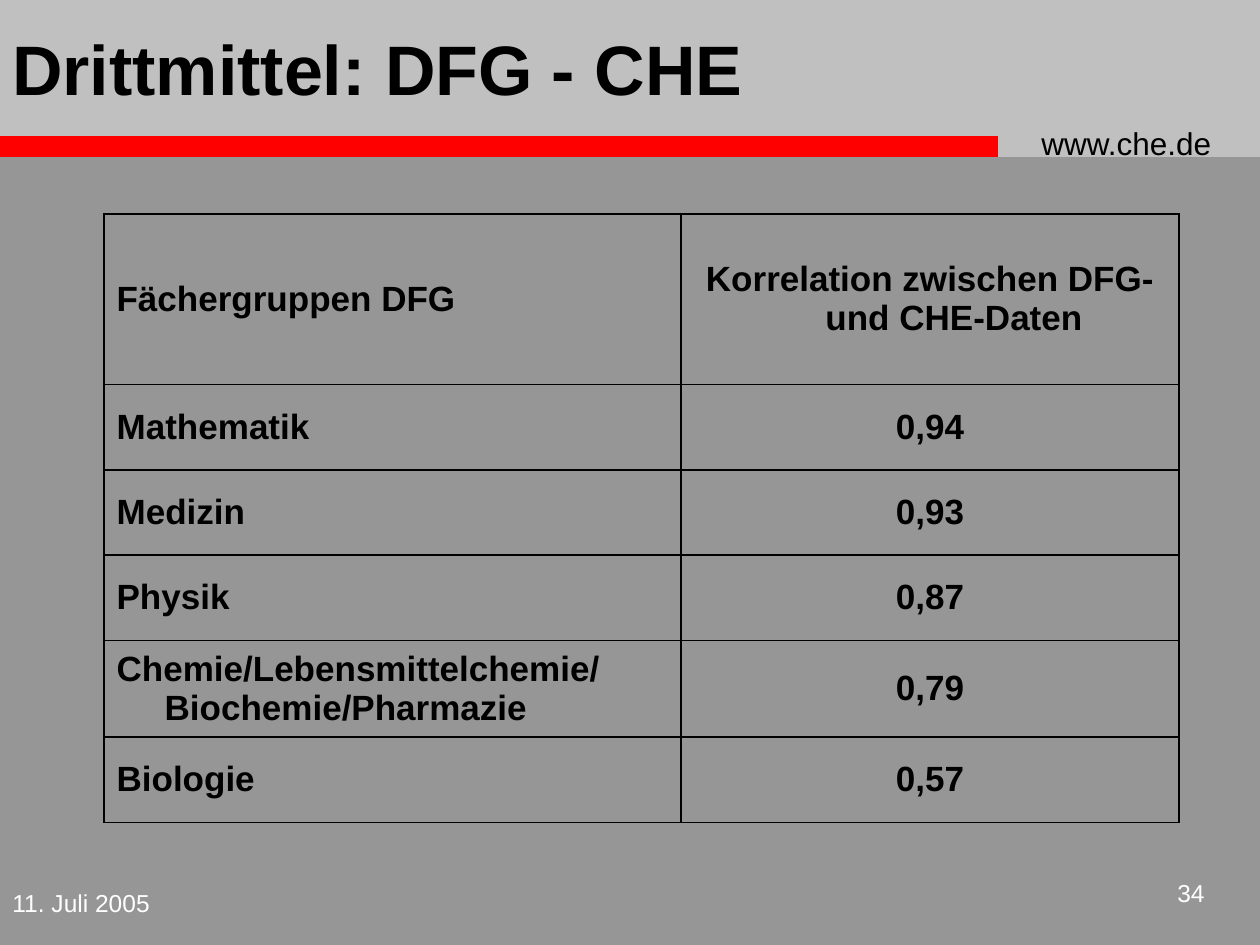
from lxml import etree
from pptx import Presentation
from pptx.dml.color import RGBColor
from pptx.enum.shapes import MSO_SHAPE
from pptx.enum.text import MSO_ANCHOR, PP_ALIGN
from pptx.oxml.ns import qn
from pptx.util import Emu, Pt

RECT = MSO_SHAPE.RECTANGLE
TOP, MIDDLE = MSO_ANCHOR.TOP, MSO_ANCHOR.MIDDLE
LEFT, CENTER, RIGHT = PP_ALIGN.LEFT, PP_ALIGN.CENTER, PP_ALIGN.RIGHT
COLORS = {
    "background": "969696",
    "header": "C0C0C0",
    "bar": "FF0000",
    "text": "000000",
    "footer": "FFFFFF",
}
FORMATS = {
    "title": {"size": Pt(40), "bold": True},
    "address": {"size": Pt(18), "bold": False},
    "footer": {"size": Pt(14), "bold": False},
    "cell": {"size": Pt(20), "bold": True},
}
ROWS = [
    ("Fächergruppen DFG", "Korrelation zwischen DFG- und CHE-Daten"),
    ("Mathematik", "0,94"),
    ("Medizin", "0,93"),
    ("Physik", "0,87"),
    ("Chemie/Lebensmittelchemie/Biochemie/Pharmazie", "0,79"),
    ("Biologie", "0,57"),
]


def px(value):
    return Emu(round(value * 914400 / 126))


def rgb(name):
    return RGBColor.from_string(COLORS[name])


def write(p, text, style, color="text", align=LEFT):
    p.alignment = align
    r = p.add_run()
    r.text = text
    r.font.name = "Arial"
    r.font.color.rgb = rgb(color)
    for name, value in FORMATS[style].items():
        setattr(r.font, name, value)


def add_text(s, box, text, style, color="text", align=LEFT, anchor=TOP):
    tf = s.shapes.add_textbox(*map(px, box)).text_frame
    tf.word_wrap = True
    tf.vertical_anchor = anchor
    write(tf.paragraphs[0], text, style, color, align)


def add_rect(s, box, color):
    sp = s.shapes.add_shape(RECT, *map(px, box))
    sp.shadow.inherit = False
    sp.fill.solid()
    sp.fill.fore_color.rgb = rgb(color)
    sp.line.fill.background()


def add_header(s, x, y, w, h):
    bar_h = 21
    bar_y = y + h - bar_h
    add_rect(s, (x, y, w, h), "header")
    add_rect(s, (x, bar_y, 998, bar_h), "bar")
    add_text(s, (x + 1029, bar_y - 18, 221, 50), "www.che.de", "address")
    add_text(s, (x, y, 1018, h - bar_h), "Drittmittel: DFG - CHE", "title", anchor=MIDDLE)


def add_footer(s, x, y, w, h):
    add_text(s, (x, y + 10, 323, h - 10), "11. Juli 2005", "footer", "footer")
    add_text(s, (x + w - 116, y, 73, 53), "34", "footer", "footer", RIGHT)


def add_borders(cell):
    tc_pr = cell._tc.get_or_add_tcPr()
    for i, side in enumerate(("lnL", "lnR", "lnT", "lnB")):
        ln = etree.Element(qn(f"a:{side}"), w=str(Pt(1)))
        fill = etree.SubElement(ln, qn("a:solidFill"))
        etree.SubElement(fill, qn("a:srgbClr"), val=COLORS["text"])
        tc_pr.insert(i, ln)


def add_correlations(s, x, y, w, h):
    frame = s.shapes.add_table(len(ROWS), 2, px(x), px(y), px(w), px(h))
    table = frame.table
    table.first_row = table.horz_banding = False
    first_w = 577
    for column, width in zip(table.columns, (first_w, w - first_w)):
        column.width = px(width)
    unit = h / (len(ROWS) + 1)
    for i, (row, texts) in enumerate(zip(table.rows, ROWS)):
        row.height = px(unit * (2 if i == 0 else 1))
        for cell, text, align in zip(row.cells, texts, (LEFT, CENTER)):
            cell.fill.background()
            cell.vertical_anchor = MIDDLE
            add_borders(cell)
            p = cell.text_frame.paragraphs[0]
            p_pr = p._p.get_or_add_pPr()
            p_pr.set("marL", str(px(48)))
            p_pr.set("indent", str(-px(48)))
            write(p, text, "cell", align=align)


def main():
    prs = Presentation()
    prs.slide_width, prs.slide_height = px(1260), px(945)
    s = prs.slides.add_slide(prs.slide_layouts[6])
    s.background.fill.solid()
    s.background.fill.fore_color.rgb = rgb("background")
    add_header(s, 0, 0, 1260, 157)
    add_correlations(s, 104, 214, 1075, 597)
    add_footer(s, 0, 872, 1260, 73)
    prs.save("out.pptx")


if __name__ == "__main__":
    main()
